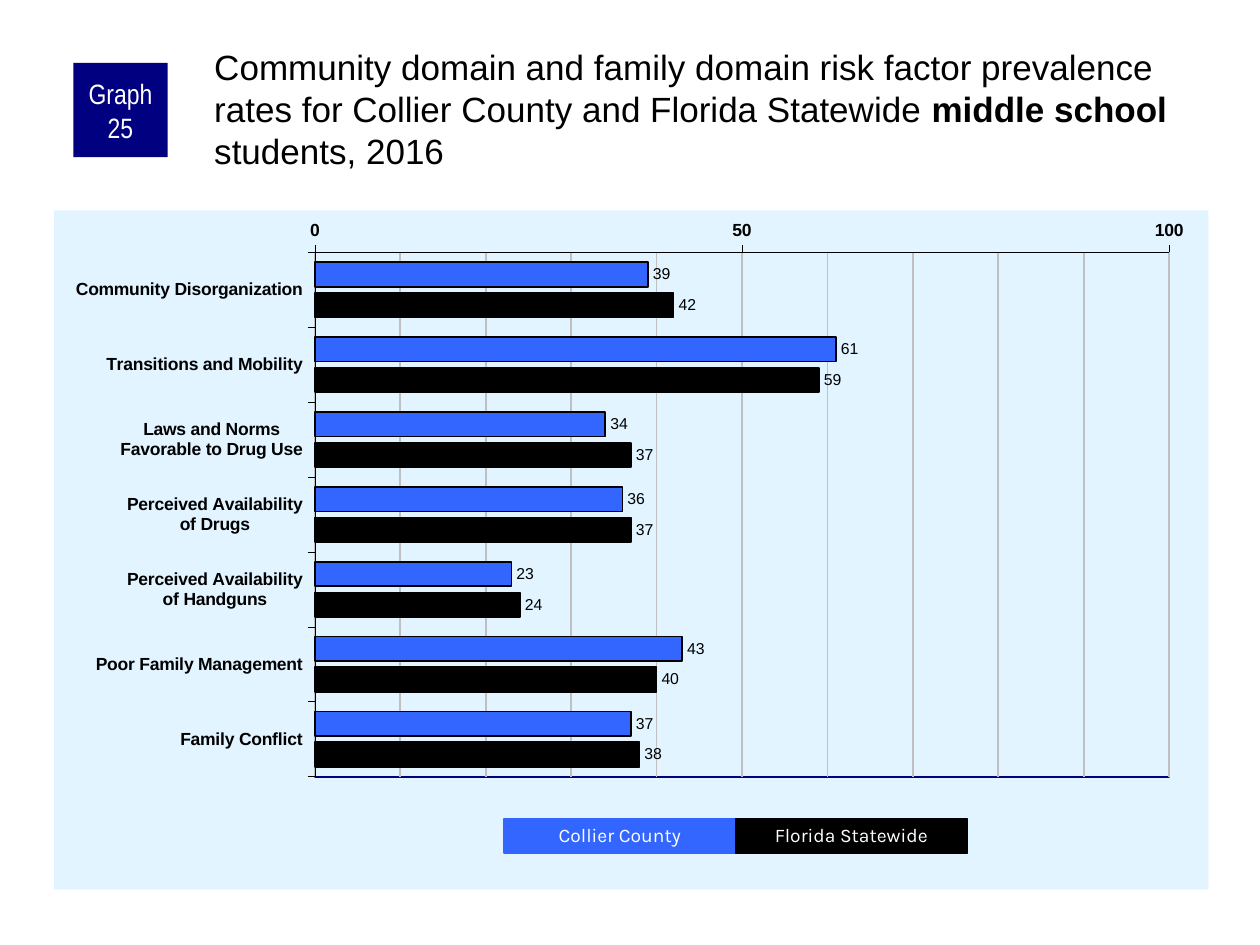
from copy import deepcopy
from dataclasses import dataclass

from pptx import Presentation
from pptx.chart.data import CategoryChartData
from pptx.dml.color import RGBColor
from pptx.enum.chart import XL_AXIS_CROSSES, XL_CHART_TYPE, XL_LABEL_POSITION, XL_TICK_MARK
from pptx.enum.shapes import MSO_SHAPE
from pptx.enum.text import MSO_ANCHOR, PP_ALIGN
from pptx.oxml import parse_xml
from pptx.oxml.ns import nsdecls, qn
from pptx.util import Cm, Pt

CLUSTERED_BARS = XL_CHART_TYPE.BAR_CLUSTERED
BAR_END = XL_LABEL_POSITION.OUTSIDE_END
AT_MAXIMUM = XL_AXIS_CROSSES.MAXIMUM
TICK_OUT, TICK_NONE = XL_TICK_MARK.OUTSIDE, XL_TICK_MARK.NONE
RECTANGLE = MSO_SHAPE.RECTANGLE
MIDDLE = MSO_ANCHOR.MIDDLE
CENTER, LEFT = PP_ALIGN.CENTER, PP_ALIGN.LEFT


@dataclass(frozen=True)
class Theme:
    navy: str = "000080"
    blue: str = "3366FF"
    black: str = "000000"
    white: str = "FFFFFF"
    grid: str = "C0C0C0"
    panel: str = "E1F4FF"
    body_font: str = "Arial"
    badge_font: str = "Arial Narrow"
    legend_font: str = "Karla"
    title_size: float = 20
    badge_size: float = 16
    legend_size: float = 11
    axis_size: float = 10
    value_size: float = 9


THEME = Theme()

BADGE = "Graph 25"
TITLE = [
    ("Community domain and family domain risk factor prevalence rates "
     "for Collier County and Florida Statewide ", False),
    ("middle school", True),
    (" students, 2016", False),
]
RISK_FACTORS = [
    ("Community Disorganization", 39, 42),
    ("Transitions and Mobility", 61, 59),
    ("Laws and Norms\nFavorable to Drug Use", 34, 37),
    ("Perceived Availability\nof Drugs", 36, 37),
    ("Perceived Availability\nof Handguns", 23, 24),
    ("Poor Family Management", 43, 40),
    ("Family Conflict", 37, 38),
]
REGIONS = [("Collier County", THEME.blue), ("Florida Statewide", THEME.black)]
PLOT_FRACTIONS = {"x": 0.226, "y": 0.062, "w": 0.74, "h": 0.772}


def style_font(font, name, size, color, bold=False):
    font.name = name
    font.size = Pt(size)
    font.bold = bold
    font.color.rgb = RGBColor.from_string(color)


def style_line(line, color, width):
    line.color.rgb = RGBColor.from_string(color)
    line.width = Pt(width)


def set_margins(frame, left, top, right, bottom):
    frame.margin_left, frame.margin_top = Cm(left), Cm(top)
    frame.margin_right, frame.margin_bottom = Cm(right), Cm(bottom)


def add_label_box(slide, box, label, fill, font_name, size):
    shape = slide.shapes.add_shape(RECTANGLE, *map(Cm, box))
    shape.shadow.inherit = False
    shape.fill.solid()
    shape.fill.fore_color.rgb = RGBColor.from_string(fill)
    shape.line.fill.background()
    frame = shape.text_frame
    frame.word_wrap = True
    frame.vertical_anchor = MIDDLE
    frame.text = label
    frame.paragraphs[0].alignment = CENTER
    style_font(frame.paragraphs[0].runs[0].font, font_name, size, THEME.white)
    return shape


def add_title(slide):
    frame = slide.shapes.add_textbox(Cm(4.24), Cm(0.84), Cm(20.12), Cm(2.11)).text_frame
    frame.word_wrap = True
    set_margins(frame, 0.08, 0.08, 0, 0)
    paragraph = frame.paragraphs[0]
    paragraph.alignment = LEFT
    for words, bold in TITLE:
        run = paragraph.add_run()
        run.text = words
        style_font(run.font, THEME.body_font, THEME.title_size, THEME.black, bold)


def place_plot(chart):
    plot_area = chart.plots[0]._element.getparent()
    for layout in plot_area.findall(qn("c:layout")):
        plot_area.remove(layout)
    modes = "".join(f'<c:{side}Mode val="edge"/>' for side in "xy")
    sizes = "".join(f'<c:{side} val="{part}"/>' for side, part in PLOT_FRACTIONS.items())
    plot_area.insert(0, parse_xml(
        f'<c:layout {nsdecls("c")}><c:manualLayout><c:layoutTarget val="inner"/>'
        f'{modes}{sizes}</c:manualLayout></c:layout>'))
    plot_area.append(parse_xml(
        f'<c:spPr {nsdecls("c", "a")}><a:noFill/><a:ln w="{Pt(1)}"><a:solidFill>'
        f'<a:srgbClr val="{THEME.navy}"/></a:solidFill></a:ln></c:spPr>'))


def fill_panel(chart):
    chart._chartSpace.find(qn("c:chart")).addnext(parse_xml(
        f'<c:spPr {nsdecls("c", "a")}><a:solidFill><a:srgbClr val="{THEME.panel}"/>'
        f'</a:solidFill><a:ln><a:noFill/></a:ln></c:spPr>'))


def style_axes(chart):
    factors, rates = chart.category_axis, chart.value_axis
    for axis in (factors, rates):
        style_font(axis.tick_labels.font, THEME.body_font, THEME.axis_size, THEME.black, True)
        style_line(axis.format.line, THEME.black, 0.25)
        axis.major_tick_mark = TICK_OUT
        axis.minor_tick_mark = TICK_NONE
    factors.reverse_order = True
    factors.crosses = AT_MAXIMUM
    rates.minimum_scale, rates.maximum_scale = 0, 100
    rates.major_unit, rates.minor_unit = 50, 10
    rates.has_major_gridlines = rates.has_minor_gridlines = True
    style_line(rates.major_gridlines.format.line, THEME.grid, 1)
    major, minor = (rates._element.find(qn(f"c:{rank}Gridlines")) for rank in ("major", "minor"))
    minor.append(deepcopy(major.find(qn("c:spPr"))))


def add_rates_chart(slide):
    names, *rates = zip(*RISK_FACTORS)
    prevalence = CategoryChartData()
    prevalence.categories = names
    for (region, _), values in zip(REGIONS, rates):
        prevalence.add_series(region, values)
    chart = slide.shapes.add_chart(
        CLUSTERED_BARS, Cm(1.09), Cm(4.24), Cm(23.27), Cm(13.69), prevalence).chart
    chart.has_title = chart.has_legend = False
    style_font(chart.font, THEME.body_font, THEME.axis_size, THEME.black)
    fill_panel(chart)
    style_axes(chart)
    place_plot(chart)

    bars = chart.plots[0]
    bars.gap_width, bars.overlap = 80, -25
    bars.vary_by_categories = False
    for series, (_, color) in zip(bars.series, REGIONS):
        series.invert_if_negative = False
        series.format.fill.solid()
        series.format.fill.fore_color.rgb = RGBColor.from_string(color)
        style_line(series.format.line, THEME.black, 1)
        labels = series.data_labels
        labels.show_value = True
        labels.position = BAR_END
        style_font(labels.font, THEME.body_font, THEME.value_size, THEME.black)


def add_legend(slide):
    left, top, width, height = 10.16, 16.51, 4.67, 0.69
    for index, (region, color) in enumerate(REGIONS):
        box = (left + index * width, top, width, height)
        key = add_label_box(slide, box, region, color, THEME.legend_font, THEME.legend_size)
        style_line(key.line, color, 0.75)
        key.text_frame.paragraphs[0].line_spacing = 0.9


def main():
    deck = Presentation()
    deck.slide_width, deck.slide_height = Cm(25.4), Cm(19.05)
    slide = deck.slides.add_slide(deck.slide_layouts[6])
    add_rates_chart(slide)
    badge = add_label_box(slide, (1.48, 1.27, 1.9, 1.9), BADGE, THEME.navy,
                          THEME.badge_font, THEME.badge_size)
    set_margins(badge.text_frame, 0.13, 0, 0.13, 0)
    add_title(slide)
    add_legend(slide)
    deck.save("out.pptx")


if __name__ == "__main__":
    main()
